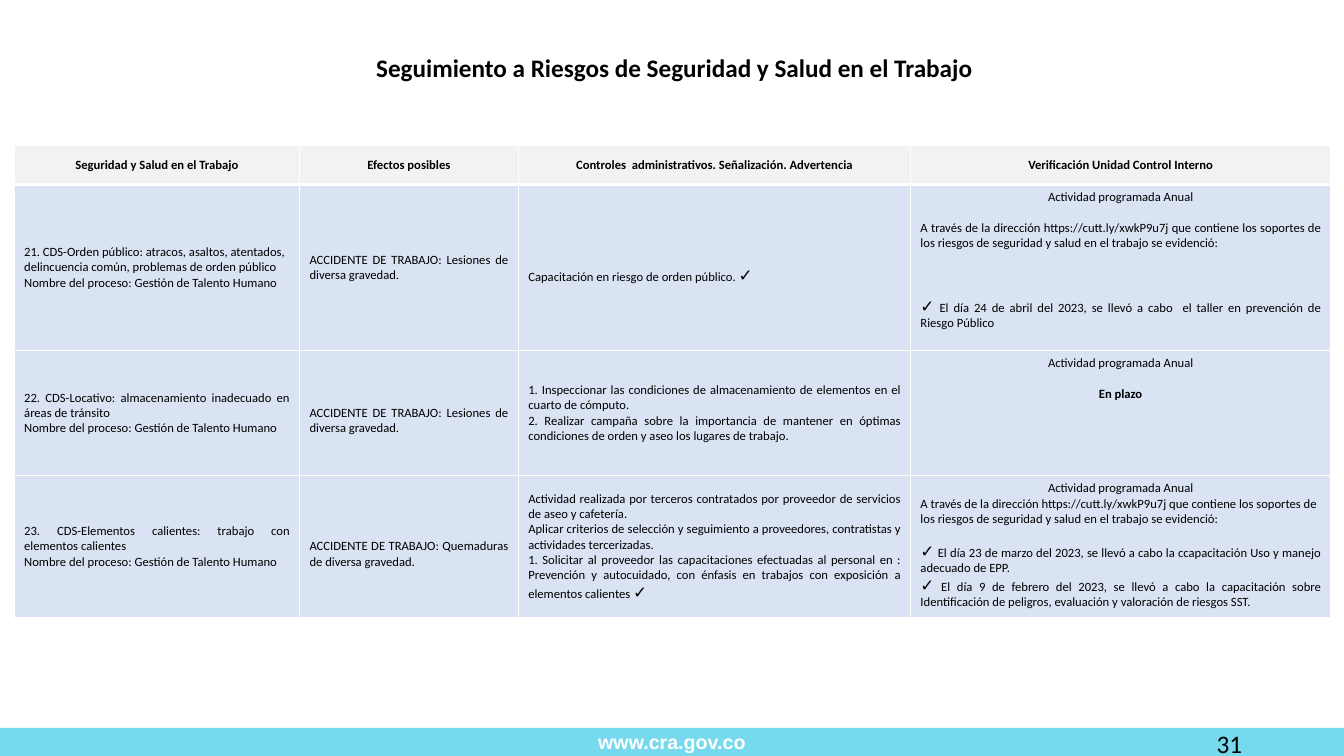
from dataclasses import dataclass

from lxml.etree import SubElement as Sub
from pptx import Presentation
from pptx.dml.color import RGBColor as Rgb
from pptx.enum.shapes import MSO_SHAPE as Shape
from pptx.enum.text import MSO_ANCHOR as Anchor, PP_ALIGN as Align
from pptx.oxml.ns import qn
from pptx.util import Emu, Inches, Pt

WIDE, HIGH = Inches(13.33), Inches(7.5)
BLACK, WHITE, CYAN, GRAY, BLUE = "000000", "FFFFFF", "77D9ED", "F2F2F2", "DAE3F3"
COLS = (21.23, 16.28, 29.18, 31.28)
ROWS = (5.2, 22, 16.53, 18.6)
LINE = 11  # height in points of one line of table text
TICK = "✓"


@dataclass
class Para:
    text: str
    align: Align = Align.JUSTIFY
    bold: bool = False
    gap: float = 0  # points before
    size: float = 9
    face: str = "Calibri"
    color: str = BLACK


@dataclass
class Cell:
    paras: list[Para]
    anchor: Anchor = Anchor.MIDDLE
    drop: float = 0  # extra top margin in points
    fill: str = BLUE
    rule: float = 1  # bottom border in points


def hue(code: str) -> Rgb:
    return Rgb.from_string(code)


def across(share: float) -> Emu:
    return Emu(round(WIDE * share / 100))


def down(share: float) -> Emu:
    return Emu(round(HIGH * share / 100))


def area(left: float, top: float, width: float, height: float) -> tuple:
    return across(left), down(top), across(width), down(height)


def write(frame, paras: list[Para]) -> None:
    frame.word_wrap = True
    for i, item in enumerate(paras):
        para = frame.add_paragraph() if i else frame.paragraphs[0]
        para.alignment = item.align
        if item.gap:
            para.space_before = Pt(item.gap)
        font = para.font
        font.name, font.size, font.bold = item.face, Pt(item.size), item.bold
        font.color.rgb = hue(item.color)
        before, tick, after = item.text.partition(TICK)
        for part in filter(None, (before, tick, after)):
            run = para.add_run()
            run.text = part
            if part == TICK:
                run.font.name, run.font.size = "Arial", Pt(12)


def border(cell, rule: float) -> None:
    props = cell._tc.get_or_add_tcPr()
    for side, size in (("L", 1), ("R", 1), ("T", 1), ("B", rule)):
        line = Sub(props, qn(f"a:ln{side}"), w=str(Pt(size)))
        Sub(Sub(line, qn("a:solidFill")), qn("a:srgbClr"), val=WHITE)


def draw(cell, item: Cell) -> None:
    border(cell, item.rule)
    cell.fill.solid()
    cell.fill.fore_color.rgb = hue(item.fill)
    cell.vertical_anchor = item.anchor
    cell.margin_top = Inches(0.05) + Pt(item.drop)
    write(cell.text_frame, item.paras)


def head(text: str) -> Cell:
    return Cell([Para(text, Align.CENTER, True)], fill=GRAY, rule=3)


def body(*texts: str, drop: float = 0) -> Cell:
    return Cell([Para(text) for text in texts], drop=drop)


def check(*paras: Para) -> Cell:
    return Cell([Para("Actividad programada Anual", Align.CENTER), *paras], Anchor.TOP)


OWNER = "Nombre del proceso: Gestión de Talento Humano"
HARM = "ACCIDENTE DE TRABAJO: "
PROOF = ("A través de la dirección https://cutt.ly/xwkP9u7j que contiene los soportes de "
         "los riesgos de seguridad y salud en el trabajo se evidenció:")

GRID = [
    [head("Seguridad y Salud en el Trabajo"),
     head("Efectos posibles"),
     head("Controles  administrativos. Señalización. Advertencia"),
     head("Verificación Unidad Control Interno")],
    [Cell([Para("21. CDS-Orden público: atracos, asaltos, atentados, delincuencia común, "
                "problemas de orden público " + OWNER, Align.LEFT)]),
     body(HARM + "Lesiones de diversa gravedad."),
     body("Capacitación en riesgo de orden público. ✓", drop=LINE),
     check(Para(PROOF, gap=LINE),
           Para("✓ El día 24 de abril del 2023, se llevó a cabo  el taller en prevención "
                "de Riesgo Público", gap=3 * LINE))],
    [body("22. CDS-Locativo: almacenamiento inadecuado en áreas de tránsito", OWNER),
     body(HARM + "Lesiones de diversa gravedad.", drop=LINE),
     body("1. Inspeccionar las condiciones de almacenamiento de elementos en el cuarto de "
          "cómputo.",
          "2. Realizar campaña sobre la importancia de mantener en óptimas condiciones de "
          "orden y aseo los lugares de trabajo."),
     check(Para("En plazo", Align.CENTER, True, LINE))],
    [body("23. CDS-Elementos calientes: trabajo con elementos calientes", OWNER),
     body(HARM + "Quemaduras de diversa gravedad.", drop=LINE),
     body("Actividad realizada por terceros contratados por proveedor de servicios de aseo "
          "y cafetería.",
          "Aplicar criterios de selección y seguimiento a proveedores, contratistas y "
          "actividades tercerizadas.",
          "1. Solicitar al proveedor las capacitaciones efectuadas al personal en : "
          "Prevención y autocuidado, con énfasis en trabajos con exposición a elementos "
          "calientes ✓"),
     check(Para(PROOF, Align.LEFT),
           Para("✓ El día 23 de marzo del 2023, se llevó a cabo la ccapacitación Uso y "
                "manejo adecuado de EPP.", gap=LINE),
           Para("✓ El día 9 de febrero del 2023, se llevó a cabo la capacitación "
                "sobre Identificación de peligros, evaluación y valoración de riesgos SST."))],
]


def main() -> None:
    deck = Presentation()
    deck.slide_width, deck.slide_height = WIDE, HIGH
    slide = deck.slides.add_slide(deck.slide_layouts[5])
    shapes = slide.shapes

    # Title
    title = shapes.title
    title.left, title.top, title.width, title.height = area(1.05, 6.27, 98.27, 5.33)
    title.text_frame.vertical_anchor = Anchor.MIDDLE
    write(title.text_frame, [Para("Seguimiento a Riesgos de Seguridad y Salud en el Trabajo",
                                  Align.CENTER, True, size=18)])

    # Footer band and page number
    band = shapes.add_shape(Shape.RECTANGLE, *area(0, 96.27, 100, 3.73))
    band.shadow.inherit = False
    band.fill.solid()
    band.fill.fore_color.rgb = hue(CYAN)
    band.line.fill.background()
    write(band.text_frame, [Para("www.cra.gov.co", Align.CENTER, True, size=14,
                                 face="Arial", color=WHITE)])
    page = shapes.add_textbox(*area(70.67, 95.73, 22.5, 5.33))
    write(page.text_frame, [Para("31", Align.RIGHT, size=18)])

    # Risk table
    table = shapes.add_table(len(ROWS), len(COLS),
                             *area(1.05, 19.2, sum(COLS), sum(ROWS))).table
    table.horz_banding = False
    for col, share in zip(table.columns, COLS):
        col.width = across(share)
    for row, share, items in zip(table.rows, ROWS, GRID):
        row.height = down(share)
        for cell, item in zip(row.cells, items):
            draw(cell, item)

    deck.save("out.pptx")


if __name__ == "__main__":
    main()
